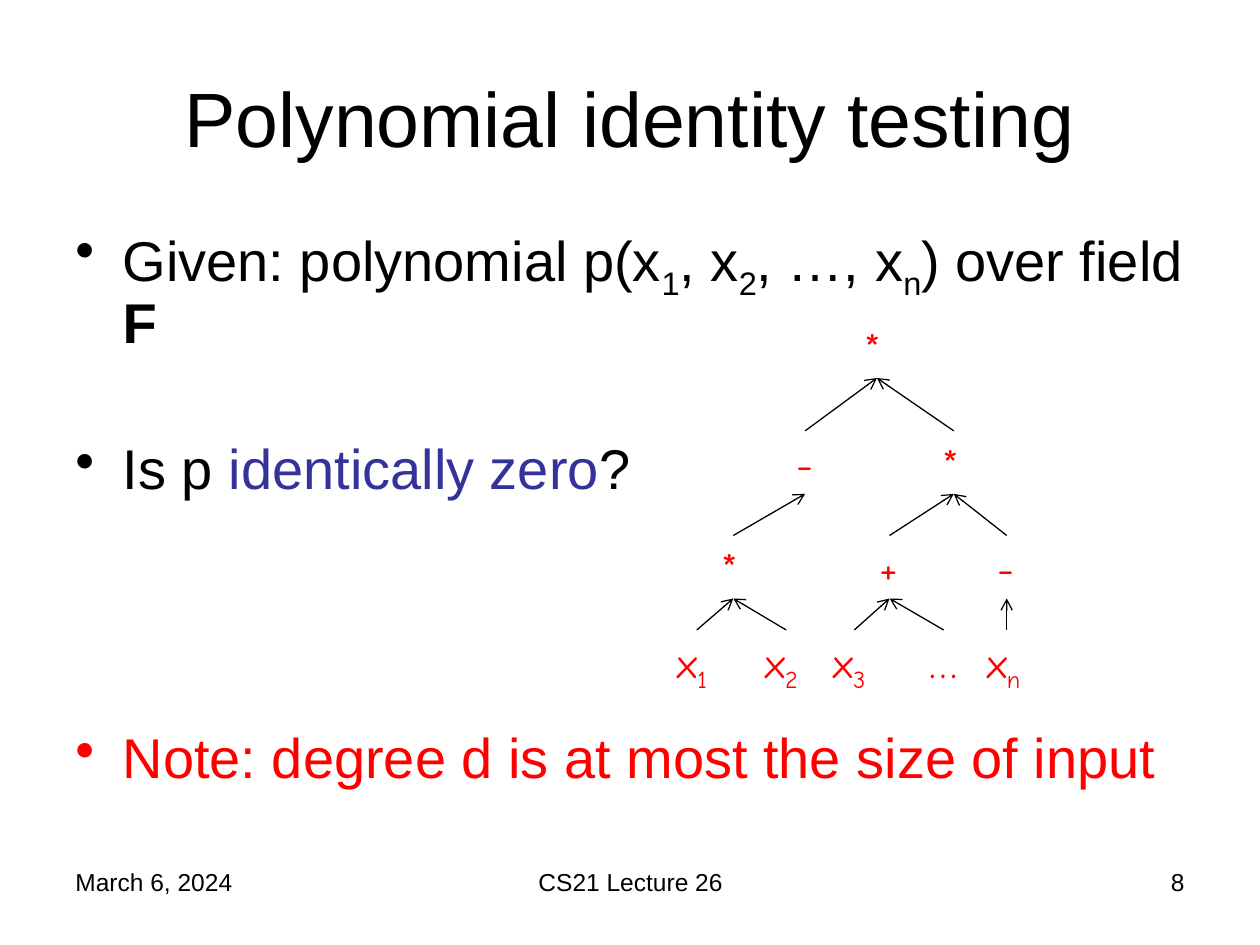
import pptx
import pptx.util
import pptx.dml.color
import pptx.enum.shapes
import pptx.enum.text
import lxml.etree

COLORS = {"ink": "000000", "accent": "333399", "red": "FF0000"}
CELL = 0.1
LEVELS = [25, 34.2, 42.5, 50]
NODE_HEIGHT = 5
ALIGN = pptx.enum.text.PP_ALIGN
ANCHOR = pptx.enum.text.MSO_ANCHOR

NODES = {
    "root": ("*", "", 69.6, 4, 0, None),
    "minus": ("-", "", 63.9, 3.4, 1, "root"),
    "times": ("*", "", 75.7, 3.8, 1, "root"),
    "left times": ("*", "", 58.2, 3.8, 2, "minus"),
    "plus": ("+", "", 70.6, 3.6, 2, "times"),
    "right minus": ("-", "", 79.9, 3.4, 2, "times"),
    "x1": ("x", "1", 55.3, 5, 3, "left times"),
    "x2": ("x", "2", 62.4, 5.3, 3, "left times"),
    "x3": ("x", "3", 67.8, 5.3, 3, "plus"),
    "dots": ("…", "", 74.9, 4.3, 3, "plus"),
    "xn": ("x", "n", 79.9, 5.1, 3, "right minus"),
}

FOOTERS = [
    (5, 23.3, "March 6, 2024", ALIGN.LEFT),
    (34.2, 31.7, "CS21 Lecture 26", ALIGN.CENTER),
    (71.7, 23.3, "8", ALIGN.RIGHT),
]

BULLETS = [
    (7.7, [("Given: polynomial p(x", {}), ("1", {"sub": True}), (", x", {}),
           ("2", {"sub": True}), (", …, x", {}), ("n", {"sub": True}),
           (") over field ", {}), ("F", {"bold": True})]),
    (48.6, [("Is p ", {}), ("identically zero", {"color": "accent"}), ("?", {})]),
    (130.4, [("Note: degree d is at most the size of input", {"color": "red"})]),
]


def grid(n):
    """Turn a count of grid cells into a length."""
    return pptx.util.Inches(n * CELL)


def add_run(p, text, size, color="ink", font="Arial", bold=False, sub=False):
    """Append one styled run to a paragraph."""
    r = p.add_run()
    r.text = text
    r.font.size = pptx.util.Pt(size)
    r.font.name = font
    r.font.bold = bold
    r.font.color.rgb = pptx.dml.color.RGBColor.from_string(COLORS[color])
    if sub:
        r._r.get_or_add_rPr().set("baseline", "-25000")


def add_box(s, col, row, cols, rows, wrap=True, anchor=ANCHOR.TOP):
    """Add an empty text box placed on the grid."""
    sp = s.shapes.add_textbox(grid(col), grid(row), grid(cols), grid(rows))
    sp.text_frame.word_wrap = wrap
    sp.text_frame.vertical_anchor = anchor
    return sp


def add_line(s, box, text, size, align):
    """Write a single aligned line into a text box."""
    p = box.text_frame.paragraphs[0]
    p.alignment = align
    add_run(p, text, size)


def add_bullets(s):
    """Add the bulleted body with its paragraph spacing."""
    tf = add_box(s, 5, 17.5, 90, 49.5).text_frame
    for i, (gap, runs) in enumerate(BULLETS):
        p = tf.add_paragraph() if i else tf.paragraphs[0]
        p.line_spacing = 0.9
        p.space_before = pptx.util.Pt(gap)
        pPr = p._p.get_or_add_pPr()
        pPr.set("marL", str(grid(3.75)))
        pPr.set("indent", str(-grid(3.75)))
        bullet = lxml.etree.SubElement(pPr, pptx.oxml.ns.qn("a:buChar"))
        bullet.set("char", "•")
        for text, style in runs:
            add_run(p, text, 32, **style)


def add_node(s, label, sub, centre, width, level):
    """Add one node of the formula tree, centred on its column."""
    sp = add_box(s, centre - width / 2, LEVELS[level], width, NODE_HEIGHT, wrap=False)
    p = sp.text_frame.paragraphs[0]
    add_run(p, label, 24, "red", "Comic Neue")
    if sub:
        add_run(p, sub, 24, "red", "Comic Neue", sub=True)
    return sp


def add_arrow(s, child, parent):
    """Join the top of a child to the bottom of its parent."""
    c = s.shapes.add_connector(pptx.enum.shapes.MSO_CONNECTOR.STRAIGHT, 0, 0, 0, 0)
    c.begin_connect(child, 0)
    c.end_connect(parent, 2)
    c.line.width = pptx.util.Pt(0.75)
    c.line.color.rgb = pptx.dml.color.RGBColor.from_string(COLORS["ink"])
    qn = pptx.oxml.ns.qn
    lxml.etree.SubElement(c.line._get_or_add_ln(), qn("a:tailEnd")).set("type", "arrow")
    lxml.etree.SubElement(c._element.spPr, qn("a:effectLst"))


def add_tree(s):
    """Add the formula tree with its arrows."""
    boxes = {}
    for name, (label, sub, centre, width, level, parent) in NODES.items():
        boxes[name] = add_node(s, label, sub, centre, width, level)
        if parent:
            add_arrow(s, boxes[name], boxes[parent])


def main():
    """Build the slide and save it."""
    prs = pptx.Presentation()
    prs.slide_width, prs.slide_height = grid(100), grid(75)
    s = prs.slides.add_slide(prs.slide_layouts[6])
    for col, cols, text, align in FOOTERS:
        add_line(s, add_box(s, col, 68.3, cols, 5.2), text, 14, align)
    title = add_box(s, 5, 3, 90, 12.5, anchor=ANCHOR.MIDDLE)
    add_line(s, title, "Polynomial identity testing", 44, ALIGN.CENTER)
    add_bullets(s)
    add_tree(s)
    prs.save("out.pptx")


if __name__ == "__main__":
    main()
